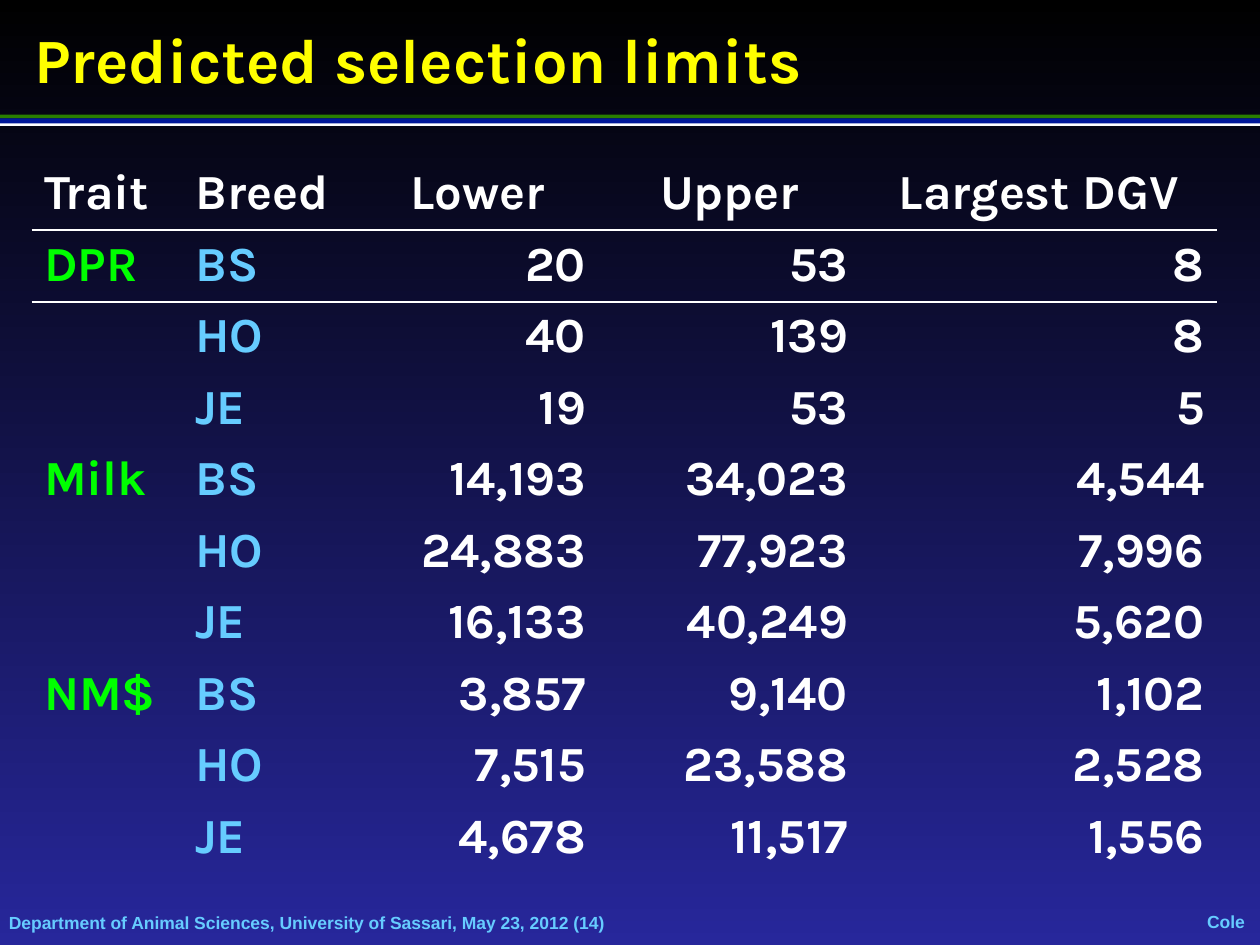
from lxml import etree
from pptx import Presentation
from pptx.dml.color import RGBColor
from pptx.enum import shapes, text
from pptx.oxml.ns import qn
from pptx.util import Inches, Pt

BLACK = RGBColor(0x00, 0x00, 0x00)
NAVY = RGBColor(0x27, 0x27, 0x9B)
WHITE = RGBColor(0xFF, 0xFF, 0xFF)
YELLOW = RGBColor(0xFF, 0xFF, 0x00)
LIME = RGBColor(0x00, 0xFF, 0x00)
SKY = RGBColor(0x66, 0xCC, 0xFF)
GREEN = RGBColor(0x2A, 0x7E, 0x00)
BLUE = RGBColor(0x00, 0x17, 0x99)

LEFT, CENTER, RIGHT = text.PP_ALIGN.LEFT, text.PP_ALIGN.CENTER, text.PP_ALIGN.RIGHT
NO_STYLE = "{2D5ABB26-0587-4C30-8999-92F81FD0307C}"

HEADER = ["Trait", "Breed", "Lower", "Upper", "Largest DGV"]
LIMITS = [
    ["DPR", "BS", "20", "53", "8"],
    ["", "HO", "40", "139", "8"],
    ["", "JE", "19", "53", "5"],
    ["Milk", "BS", "14,193", "34,023", "4,544"],
    ["", "HO", "24,883", "77,923", "7,996"],
    ["", "JE", "16,133", "40,249", "5,620"],
    ["NM$", "BS", "3,857", "9,140", "1,102"],
    ["", "HO", "7,515", "23,588", "2,528"],
    ["", "JE", "4,678", "11,517", "1,556"],
]
COL_WIDTHS = [1.2, 1.38, 1.92, 2.08, 2.83]
COL_COLORS = [LIME, SKY, WHITE, WHITE, WHITE]
ROW_HEIGHT = 0.55


def style_paragraph(p, size, font, color, align=LEFT):
    p.alignment = align
    for r in p.runs:
        r.font.size, r.font.name, r.font.bold = Pt(size), font, True
        r.font.color.rgb = color


def set_background(s):
    fill = s.background.fill
    fill.gradient()
    fill.gradient_angle = 270  # counter-clockwise, so top to bottom
    for stop, color, position in zip(fill.gradient_stops, (BLACK, NAVY), (0, 1)):
        stop.color.rgb, stop.position = color, position


def add_rule(s, top, height, color):
    sp = s.shapes.add_shape(shapes.MSO_SHAPE.RECTANGLE, 0, Inches(top), Inches(10), Inches(height))
    sp.shadow.inherit = False
    sp.fill.solid()
    sp.fill.fore_color.rgb = color
    sp.line.fill.background()


def add_footer(s, words, left, top, width, align, wrap):
    sp = s.shapes.add_textbox(Inches(left), Inches(top), Inches(width), Inches(0.17))
    tf = sp.text_frame
    tf.margin_left = tf.margin_top = tf.margin_right = tf.margin_bottom = 0
    tf.vertical_anchor = text.MSO_ANCHOR.MIDDLE
    tf.word_wrap = wrap
    tf.text = words
    style_paragraph(tf.paragraphs[0], 10, "Arial", SKY, align)


def set_title(s, words):
    sp = s.shapes.title
    sp.left, sp.top, sp.width, sp.height = map(Inches, (0.17, 0.11, 9.66, 0.7))
    tf = sp.text_frame
    tf.vertical_anchor = text.MSO_ANCHOR.MIDDLE
    tf.text = words
    style_paragraph(tf.paragraphs[0], 36, "Karla", YELLOW)


def add_border(cell, side):
    # Cell borders come before the fill in the cell properties
    pr = cell._tc.get_or_add_tcPr()
    ln = etree.Element(qn("a:" + side), w=str(Pt(1.5)))
    fill = etree.SubElement(ln, qn("a:solidFill"))
    etree.SubElement(fill, qn("a:srgbClr"), val=str(WHITE))
    pr.insert(0, ln)


def fill_cell(cell, words, color, align):
    cell.fill.background()
    cell.text = words
    p = cell.text_frame.paragraphs[0]
    p.space_before = Pt(16)
    style_paragraph(p, 28, "Karla", color, align)


def add_limits_table(s):
    rows = [HEADER] + LIMITS
    frame = s.shapes.add_table(len(rows), len(HEADER), Inches(0.25), Inches(1.26),
                               Inches(sum(COL_WIDTHS)), Inches(ROW_HEIGHT * len(rows)))
    table = frame.table
    table.first_row = table.horz_banding = False
    table._tbl.tblPr.find(qn("a:tableStyleId")).text = NO_STYLE
    for column, width in zip(table.columns, COL_WIDTHS):
        column.width = Inches(width)
    for i, row in enumerate(rows):
        table.rows[i].height = Inches(ROW_HEIGHT)
        for j, words in enumerate(row):
            cell = table.cell(i, j)
            number_align = CENTER if i == 0 else RIGHT
            fill_cell(cell, words, WHITE if i == 0 else COL_COLORS[j],
                      LEFT if j < 2 else number_align)
            # One line between the header and the body
            if i < 2:
                add_border(cell, "lnB" if i == 0 else "lnT")


def main():
    prs = Presentation()
    prs.slide_width, prs.slide_height = Inches(10), Inches(7.5)
    s = prs.slides.add_slide(prs.slide_layouts[5])
    set_background(s)

    # Footer
    add_footer(s, "Department of Animal Sciences, University of Sassari, May 23, 2012 (14)",
               0.07, 7.24, 8.09, LEFT, True)
    add_footer(s, "Cole", 9.58, 7.23, 0.3, CENTER, False)

    # Triple rule under the title
    add_rule(s, 0.91, 0.03, GREEN)
    add_rule(s, 0.97, 0.03, WHITE)
    add_rule(s, 0.94, 0.04, BLUE)

    set_title(s, "Predicted selection limits")
    add_limits_table(s)
    prs.save("out.pptx")


if __name__ == "__main__":
    main()
